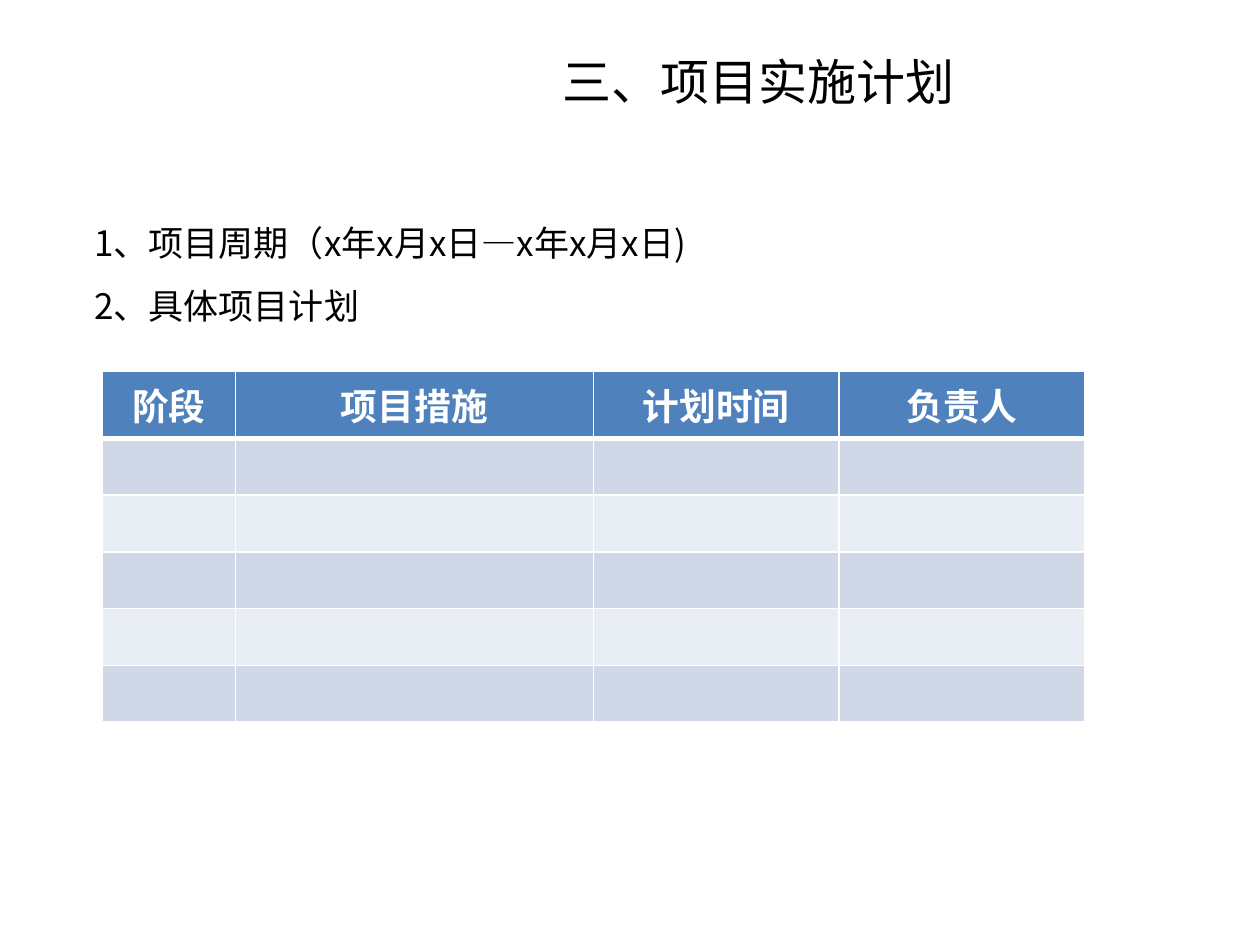
import pptx
import pptx.util
import pptx.dml.color
import pptx.enum.text
import pptx.oxml
import pptx.oxml.ns
from dataclasses import dataclass

Inches, Pt = pptx.util.Inches, pptx.util.Pt
Align = pptx.enum.text.PP_ALIGN
Anchor = pptx.enum.text.MSO_ANCHOR


@dataclass(frozen=True)
class Theme:
    cjk: str = "Noto Sans CJK SC"
    latin: str = "Calibri"
    ink: str = "000000"
    white: str = "FFFFFF"
    head: str = "4F81BD"
    bands: tuple = ("D0D8E8", "E9EDF4")
    title: int = 28
    body: int = 20
    label: int = 21
    thin: int = 1
    thick: int = 3


THEME = Theme()
PLAN = ["1、项目周期（x年x月x日—x年x月x日)", "2、具体项目计划"]
HEADS = ["阶段", "项目措施", "计划时间", "负责人"]
WIDTHS = [1.06, 2.84, 1.95, 1.95]
HEIGHTS = [0.53] + [0.45] * 5


def color(code):
    return pptx.dml.color.RGBColor.from_string(code)


def apply(item, **values):
    for name, value in values.items():
        setattr(item, name, value)


def write(para, text, size, face, ink, **values):
    """Fill a paragraph with one run, in one face for Latin and CJK."""
    run = para.add_run()
    run.text = text
    apply(run.font, size=Pt(size), name=face, **values)
    run.font.color.rgb = color(ink)
    east = pptx.oxml.parse_xml(
        f'<a:ea {pptx.oxml.ns.nsdecls("a")} typeface="{THEME.cjk}"/>')
    run.font._element.append(east)


def place(shape, left, top, width, height):
    apply(shape, left=Inches(left), top=Inches(top),
          width=Inches(width), height=Inches(height))


def add_title(slide, text):
    title = slide.shapes.title
    place(title, 3.66, 0.21, 4.72, 0.87)
    apply(title.text_frame, vertical_anchor=Anchor.MIDDLE, word_wrap=True)
    para = title.text_frame.paragraphs[0]
    para.alignment = Align.CENTER
    write(para, text, THEME.title, THEME.cjk, THEME.ink)


def add_lines(slide, lines):
    box = slide.shapes.add_textbox(
        Inches(0.65), Inches(1.54), Inches(6.46), Inches(1.05))
    frame = box.text_frame
    frame.word_wrap = True
    for i, line in enumerate(lines):
        para = frame.add_paragraph() if i else frame.paragraphs[0]
        para.line_spacing = 1.5
        write(para, line, THEME.body, THEME.cjk, THEME.ink)


def edge(cell, side, width):
    line = pptx.oxml.parse_xml(
        f'<a:ln{side} {pptx.oxml.ns.nsdecls("a")} w="{Pt(width)}">'
        f'<a:solidFill><a:srgbClr val="{THEME.white}"/></a:solidFill>'
        f'</a:ln{side}>')
    cell._tc.get_or_add_tcPr().append(line)


def paint(cell, row):
    """Draw the borders, then the fill, of a cell in the given row."""
    heavy = {0: "B", 1: "T"}.get(row)
    for side in "LRTB":
        edge(cell, side, THEME.thick if side == heavy else THEME.thin)
    cell.fill.solid()
    fill = THEME.bands[(row - 1) % 2] if row else THEME.head
    cell.fill.fore_color.rgb = color(fill)


def add_grid(slide):
    table = slide.shapes.add_table(
        len(HEIGHTS), len(WIDTHS), Inches(0.81), Inches(2.95),
        Inches(sum(WIDTHS)), Inches(sum(HEIGHTS))).table
    for col, width in zip(table.columns, WIDTHS):
        col.width = Inches(width)
    for i, (row, height) in enumerate(zip(table.rows, HEIGHTS)):
        row.height = Inches(height)
        for cell in row.cells:
            paint(cell, i)
    for cell, text in zip(table.rows[0].cells, HEADS):
        para = cell.text_frame.paragraphs[0]
        para.alignment = Align.CENTER
        write(para, text, THEME.label, THEME.latin, THEME.white, bold=True)


def main():
    deck = pptx.Presentation()
    apply(deck, slide_width=Inches(10), slide_height=Inches(7.5))
    slide = deck.slides.add_slide(deck.slide_layouts[5])
    # Heading and summary
    add_title(slide, "三、项目实施计划")
    add_lines(slide, PLAN)
    # Schedule table
    add_grid(slide)
    deck.save("out.pptx")


if __name__ == "__main__":
    main()
